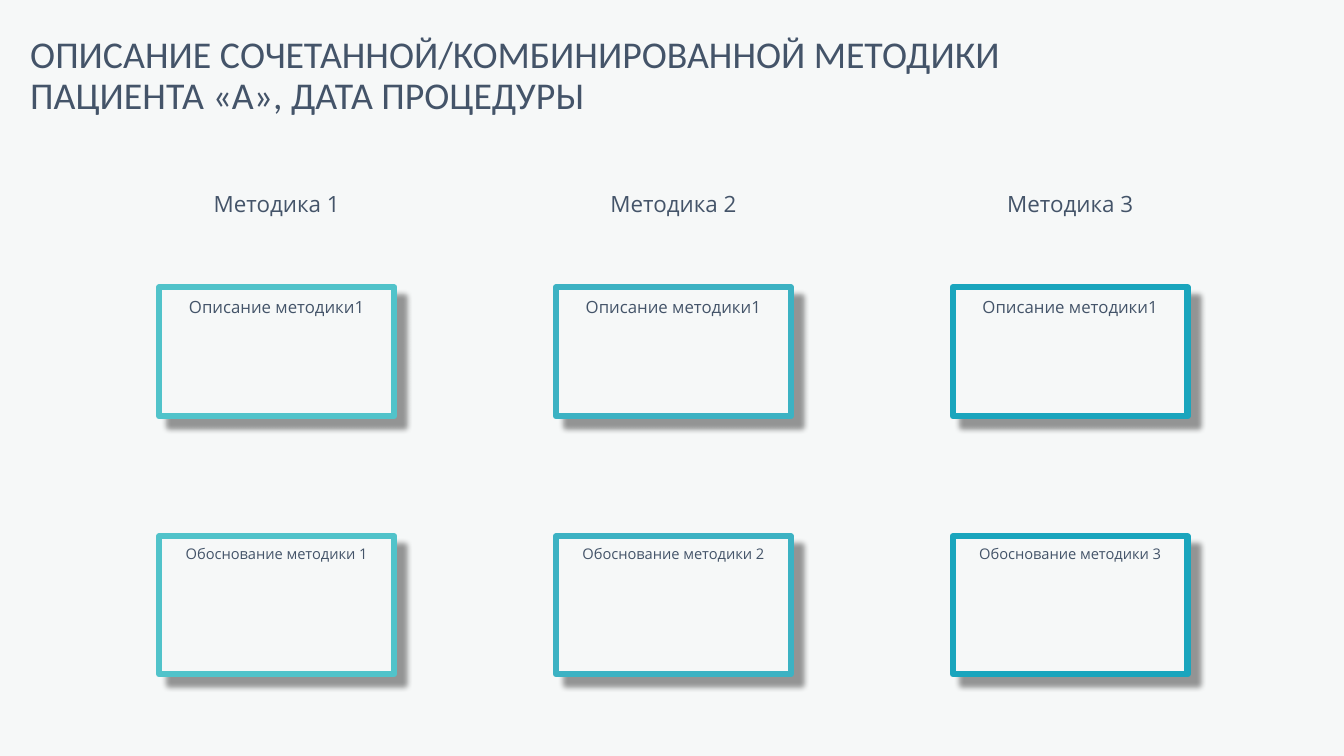
from lxml import etree
from pptx import Presentation
from pptx.dml.color import RGBColor
from pptx.enum.shapes import MSO_SHAPE
from pptx.enum.text import MSO_ANCHOR, MSO_AUTO_SIZE, PP_ALIGN
from pptx.oxml import parse_xml
from pptx.oxml.ns import nsdecls
from pptx.util import Inches, Pt

RECT = MSO_SHAPE.RECTANGLE
TOP = MSO_ANCHOR.TOP
FIXED = MSO_AUTO_SIZE.NONE
LEFT, CENTER = PP_ALIGN.LEFT, PP_ALIGN.CENTER

TITLE = ["ОПИСАНИЕ СОЧЕТАННОЙ/КОМБИНИРОВАННОЙ МЕТОДИКИ ", "ПАЦИЕНТА «А», ДАТА ПРОЦЕДУРЫ"]
METHODS = [
    ("Методика 1", "Описание методики1", "Обоснование методики 1", "light"),
    ("Методика 2", "Описание методики1", "Обоснование методики 2", "mid"),
    ("Методика 3", "Описание методики1", "Обоснование методики 3", "deep"),
]
COLORS = {
    "paper": "F6F8F8",
    "ink": "445469",
    "light": "51C3CA",
    "mid": "3CB2C3",
    "deep": "1AA5BD",
    "shade": "000000",
}
START, STEP, WIDTH = 1.58, 3.935, 2.33
LABEL = (1.84, 0.37)
ABOUT = (2.85, 1.28, 12)
REASON = (5.32, 1.37, 10.5)


def color(name):
    return RGBColor.from_string(COLORS[name])


def write(shape, lines, size, font, align, spacing):
    frame = shape.text_frame
    frame.word_wrap = True
    frame.auto_size = FIXED
    frame.vertical_anchor = TOP
    para = frame.paragraphs[0]
    para.alignment = align
    para.line_spacing = spacing
    for i, line in enumerate(lines):
        if i:
            para.add_line_break()
        run = para.add_run()
        run.text = line
        run.font.size = Pt(size)
        run.font.name = font
        run.font.color.rgb = color("ink")


def add_shadow(shape):
    shape.shadow.inherit = False
    effects = shape.element.spPr.find(".//{*}effectLst")
    shadow = parse_xml(
        f'<a:outerShdw {nsdecls("a")} blurRad="{Pt(4)}" dist="{Pt(10)}" '
        'dir="2700000" algn="tl" rotWithShape="0"/>'
    )
    tint = etree.SubElement(shadow, shadow.tag.replace("outerShdw", "srgbClr"), val=COLORS["shade"])
    etree.SubElement(tint, shadow.tag.replace("outerShdw", "alpha"), val="40000")
    effects.append(shadow)


def add_box(slide, left, place, text, edge):
    top, height, size = place
    box = slide.shapes.add_shape(RECT, Inches(left), Inches(top), Inches(WIDTH), Inches(height))
    box.fill.solid()
    box.fill.fore_color.rgb = color("paper")
    box.line.color.rgb = color(edge)
    box.line.width = Pt(4.5)
    add_shadow(box)
    write(box, [text], size, "Open Sans", CENTER, 1.2)


def main():
    deck = Presentation()
    deck.slide_width, deck.slide_height = Inches(13.33), Inches(7.5)
    slide = deck.slides.add_slide(deck.slide_layouts[5])
    slide.background.fill.solid()
    slide.background.fill.fore_color.rgb = color("paper")

    title = slide.shapes.title
    title.left, title.top = Inches(0.2), Inches(0.31)
    title.width, title.height = Inches(12.5), Inches(0.62)
    write(title, TITLE, 27, "Calibri", LEFT, 0.9)

    for i, (name, about, reason, edge) in enumerate(METHODS):
        left = START + i * STEP
        top, height = LABEL
        label = slide.shapes.add_textbox(Inches(left), Inches(top), Inches(WIDTH), Inches(height))
        write(label, [name], 16, "Open Sans", CENTER, 1.0)
        add_box(slide, left, ABOUT, about, edge)
        add_box(slide, left, REASON, reason, edge)

    deck.save("out.pptx")


if __name__ == "__main__":
    main()
